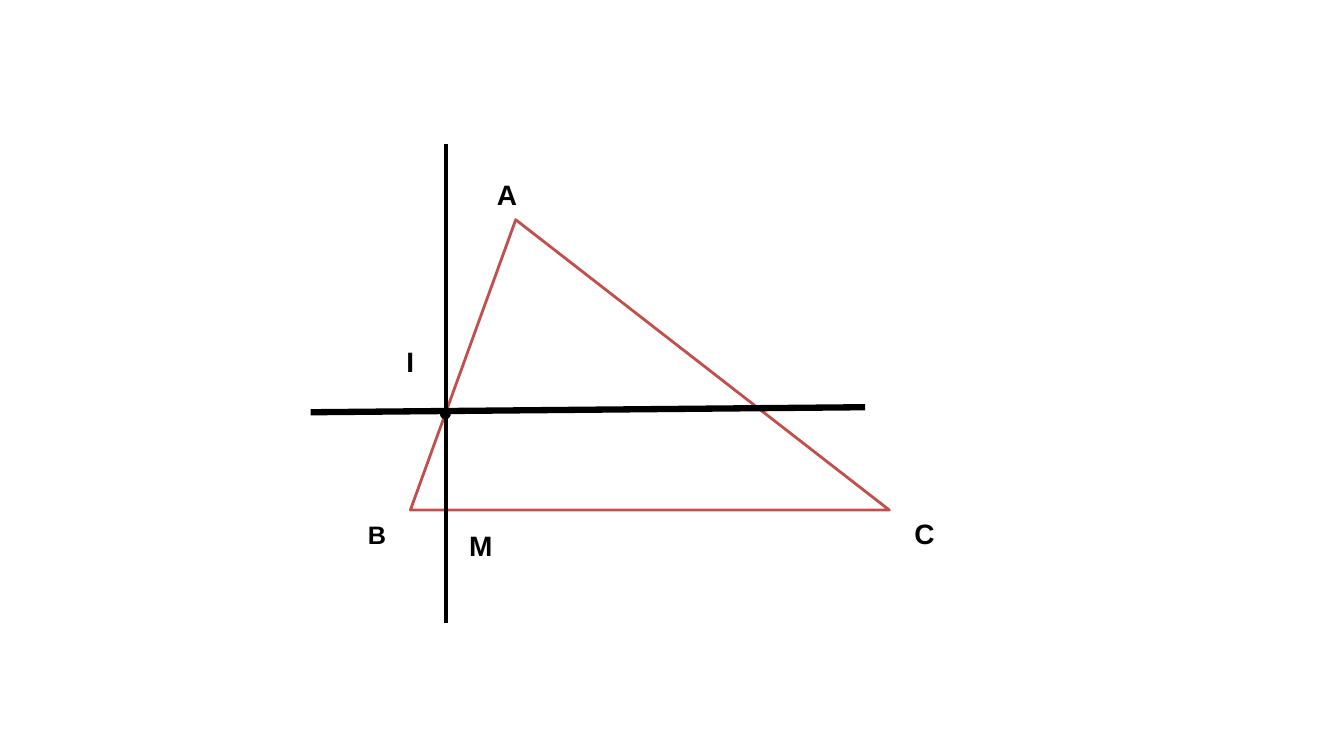
from pptx import Presentation
from pptx import util as u
from pptx.dml.color import RGBColor
from pptx.enum import shapes, text
from pptx.oxml.ns import qn
from lxml import etree

HEX = {"ink": "000000", "paper": "FFFFFF", "side": "C0504D"}
CELL = u.Inches(0.1)  # grid of square cells
COLS, ROWS = 133.3, 75
WIDE = 5  # label width in cells

# text, column, row, size in points
LABELS = [
    ("M", 45.2, 51.9, 20),
    ("I", 38.2, 33.7, 20),
    ("C", 89.2, 50.7, 20),
    ("B", 34.9, 51, 18),
    ("A", 47.8, 17.1, 20),
]
DOT = ("●", 41.7, 38.8, 18)
BOX = (40.7, 21.8, 47.5, 28.8)  # triangle ABC
APEX = 0.22
# from, to, width in points
LINES = [
    ((44.2, 14.3), (44.2, 61.8), 3),
    ((30.8, 40.9), (85.8, 40.4), 4.5),
]


def grid(*cells):
    return [round(c * CELL) for c in cells]


def color(name):
    return RGBColor.from_string(HEX[name])


def stroke(line, name, width):
    line.color.rgb = color(name)
    line.width = u.Pt(width)


def label(words, col, row, size, font="Arial", bold=True, ink="ink"):
    high = 4.3 if size == 20 else 4
    box = slide.shapes.add_textbox(*grid(col, row, WIDE, high))
    frame = box.text_frame
    frame.word_wrap = True
    frame.auto_size = text.MSO_AUTO_SIZE.SHAPE_TO_FIT_TEXT
    para = frame.paragraphs[0]
    para.alignment = text.PP_ALIGN.CENTER
    run = para.add_run()
    run.text = words
    run.font.name, run.font.size, run.font.bold = font, u.Pt(size), bold
    run.font.color.rgb = color(ink)


deck = Presentation()
deck.slide_width, deck.slide_height = grid(COLS, ROWS)
slide = deck.slides.add_slide(deck.slide_layouts[6])

for item in LABELS:
    label(*item)

abc = slide.shapes.add_shape(shapes.MSO_SHAPE.ISOSCELES_TRIANGLE, *grid(*BOX))
abc.adjustments[0] = APEX
abc.shadow.inherit = False
abc.fill.solid()
abc.fill.fore_color.rgb = color("paper")
stroke(abc.line, "side", 2)

label(*DOT)

for start, end, width in LINES:
    line = slide.shapes.add_connector(
        shapes.MSO_CONNECTOR.STRAIGHT, *grid(*start, *end))
    stroke(line.line, "ink", width)
    etree.SubElement(line._element.spPr, qn("a:effectLst"))

deck.save("out.pptx")
